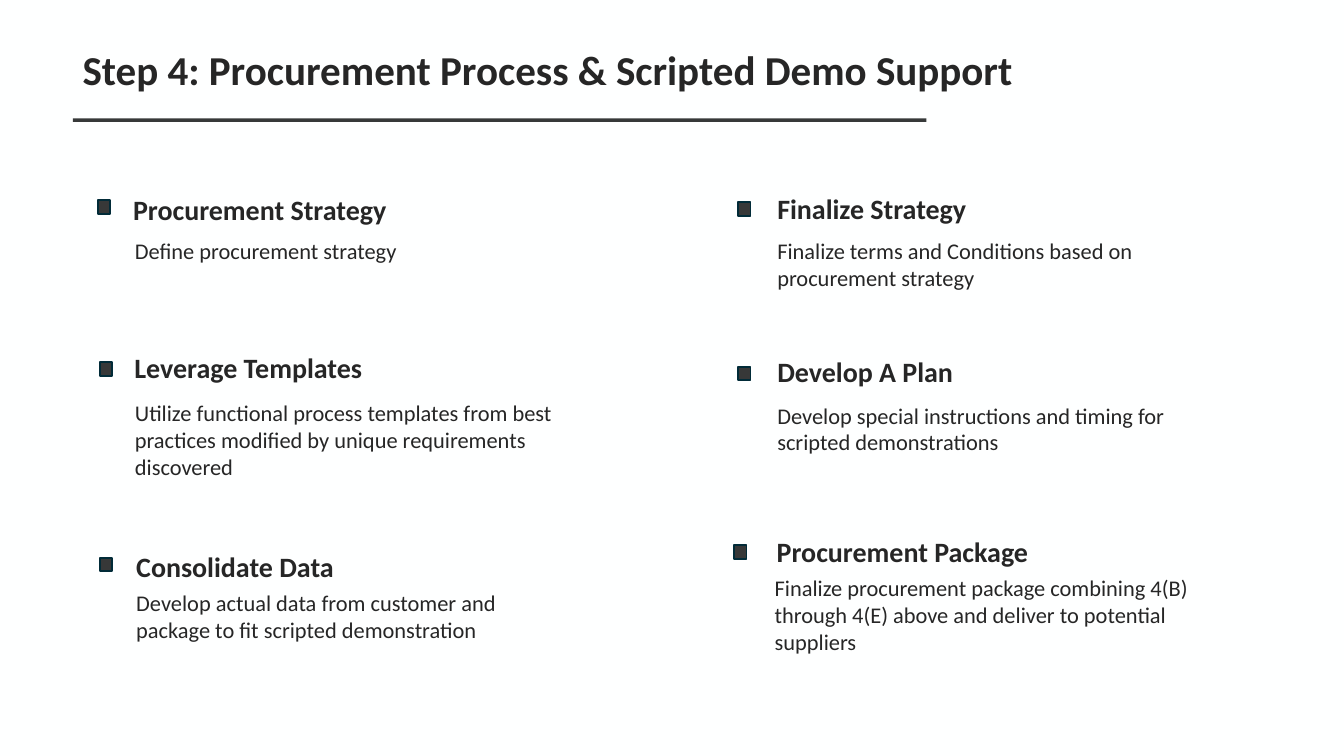
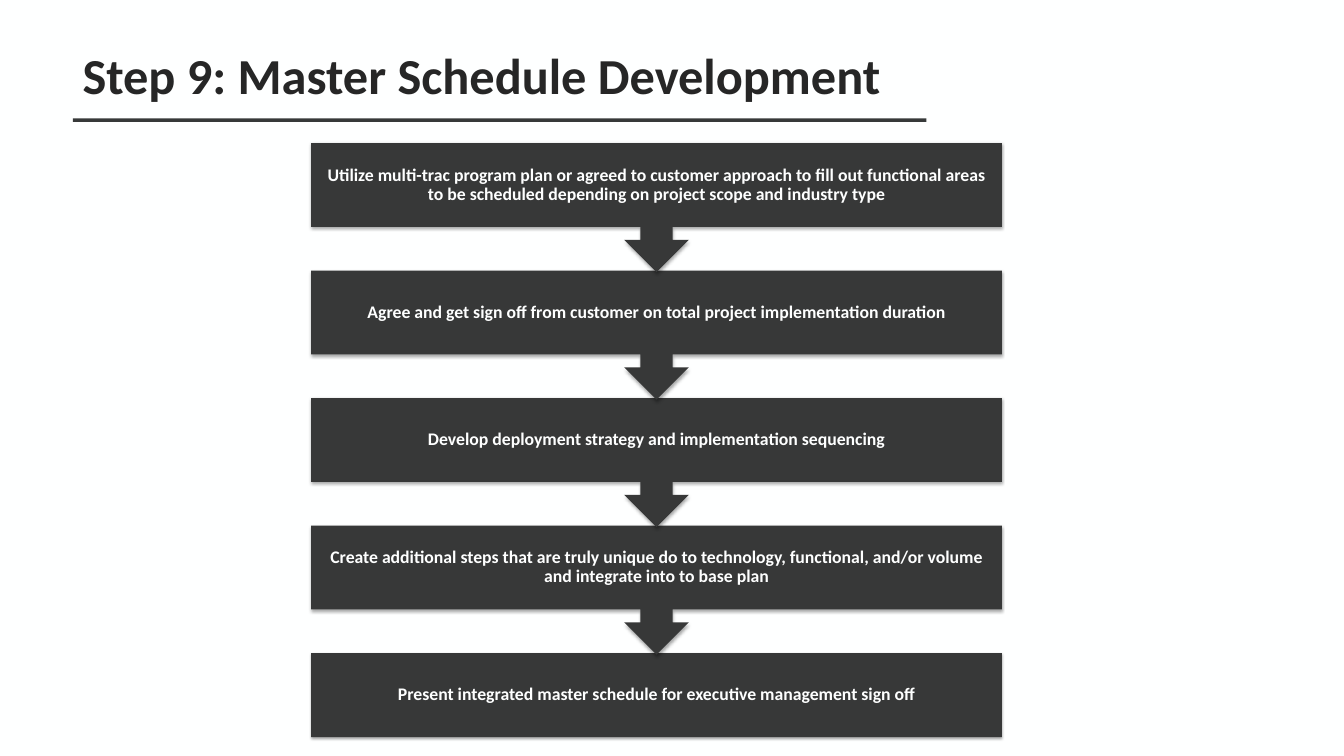
from dataclasses import dataclass

from pptx import Presentation
from pptx.dml.color import RGBColor as RGB
from pptx.enum.shapes import MSO_SHAPE as Kind
from pptx.enum.text import MSO_ANCHOR as Anchor, PP_ALIGN as Align
from pptx.oxml import parse_xml
from pptx.oxml.ns import nsdecls
from pptx.util import Cm, Pt


@dataclass(frozen=True)
class Theme:
    font: str = "Calibri"
    paper: str = "FEFFFF"
    ink: str = "262626"
    rule: str = "373939"
    dark: str = "373838"
    edge: str = "012B38"
    head: int = 30
    body: int = 24
    step: int = 19


THEME = Theme()
SHADOW = (
    f'<a:outerShdw {nsdecls("a")} blurRad="39370" dist="22860" dir="5400000" rotWithShape="0">'
    '<a:srgbClr val="000000"><a:alpha val="35000"/></a:srgbClr></a:outerShdw>'
)

TOPICS = [
    ("Procurement Strategy", (4.78, 7.14), (3.71, 7.57),
     "Define procurement strategy", (4.85, 8.84, 16.87, 4.62)),
    ("Leverage Templates", (4.83, 13.11), (3.78, 13.69),
     "Utilize functional process templates from best practices modified by unique "
     "requirements discovered", (4.85, 14.96, 16.87, 4.62)),
    ("Consolidate Data", (4.9, 20.65), (3.78, 21.08),
     "Develop actual data from customer and package to fit scripted demonstration",
     (4.9, 22.15, 16.87, 4.62)),
    ("Finalize Strategy", (29.13, 7.11), (27.91, 7.65),
     "Finalize terms and Conditions based on procurement strategy",
     (29.13, 8.84, 14.86, 2.31)),
    ("Develop A Plan", (29.13, 13.28), (27.91, 13.87),
     "Develop special instructions and timing for scripted demonstrations",
     (29.13, 15.06, 16.87, 2.31)),
    ("Procurement Package", (29.11, 20.09), (27.76, 20.62),
     "Finalize procurement package combining 4(B) through 4(E) above and deliver to "
     "potential suppliers", (29.03, 21.59, 16.87, 3.33)),
]

STEPS = [
    "Utilize multi-trac program plan or agreed to customer approach to fill out "
    "functional areas to be scheduled depending on project scope and industry type",
    "Agree and get sign off from customer on total project implementation duration",
    "Develop deployment strategy and implementation sequencing",
    "Create additional steps that are truly unique do to technology, functional, "
    "and/or volume and integrate into to base plan",
    "Present integrated master schedule for executive management sign off",
]


def write(frame, text, size=THEME.body, color=THEME.ink, bold=False,
          align=Align.LEFT, anchor=Anchor.TOP, lines=1.0, inset=None):
    frame.word_wrap = True
    frame.vertical_anchor = anchor
    if inset is not None:
        frame.margin_left = frame.margin_right = Cm(inset)
        frame.margin_top = frame.margin_bottom = Cm(inset)
    para = frame.paragraphs[0]
    para.alignment = align
    para.line_spacing = lines
    run = para.add_run()
    run.text = text
    font = run.font
    font.name, font.size, font.bold = THEME.font, Pt(size), bold
    font.color.rgb = RGB.from_string(color)


class Deck:
    def __init__(self, theme):
        self.theme = theme
        self.file = Presentation()
        self.file.slide_width, self.file.slide_height = Cm(50.8), Cm(28.58)
        self.slide = None

    def page(self, title, size):
        self.slide = self.file.slides.add_slide(self.file.slide_layouts[6])
        fill = self.slide.background.fill
        fill.solid()
        fill.fore_color.rgb = RGB.from_string(self.theme.paper)
        self.shape(Kind.RECTANGLE, (2.76, 4.48, 32.26, 0.13), self.theme.rule)
        self.text(title, (2.87, 1.55, 43.92, 2.51), size=size, bold=True)

    def text(self, text, box, **style):
        label = self.slide.shapes.add_textbox(*map(Cm, box))
        write(label.text_frame, text, **style)

    def shape(self, kind, box, color, edge=None, shadow=False):
        shape = self.slide.shapes.add_shape(kind, *map(Cm, box))
        shape.shadow.inherit = False
        shape.fill.solid()
        shape.fill.fore_color.rgb = RGB.from_string(color)
        if edge:
            shape.line.color.rgb = RGB.from_string(edge)
            shape.line.width = Pt(2)
        else:
            shape.line.fill.background()
        if shadow:
            shape._element.spPr.effectLst.append(parse_xml(SHADOW)) if hasattr(
                shape._element.spPr, "effectLst") else None
        return shape

    def topic(self, head, spot, mark, body, box):
        theme = self.theme
        self.text(body, box)
        self.text(head, (*spot, 16.87, 2.54), size=theme.head, bold=True)
        self.shape(Kind.RECTANGLE, (*mark, 0.46, 0.51), theme.dark, edge=theme.edge)

    def step(self, text, top, last):
        theme = self.theme
        left, width, high = 11.76, 26.11, 3.18
        kind = Kind.RECTANGLE if last else Kind.UP_ARROW_CALLOUT
        tall = high if last else 4.88
        shape = self.shape(kind, (left, top, width, tall), theme.dark, shadow=True)
        shape.rotation = 0 if last else 180
        self.text(text, (left, top, width, high), size=theme.step, color=theme.paper,
                  bold=True, align=Align.CENTER, anchor=Anchor.MIDDLE, lines=0.9,
                  inset=0.38)


def main():
    deck = Deck(THEME)
    deck.page("Step 4: Procurement Process & Scripted Demo Support", 44)
    for topic in TOPICS:
        deck.topic(*topic)

    deck.page("Step 9: Master Schedule Development", 54)
    final = len(STEPS) - 1
    for row, text in reversed(list(enumerate(STEPS))):
        deck.step(text, 5.41 + row * 4.82, row == final)
    deck.file.save("out.pptx")


if __name__ == "__main__":
    main()
